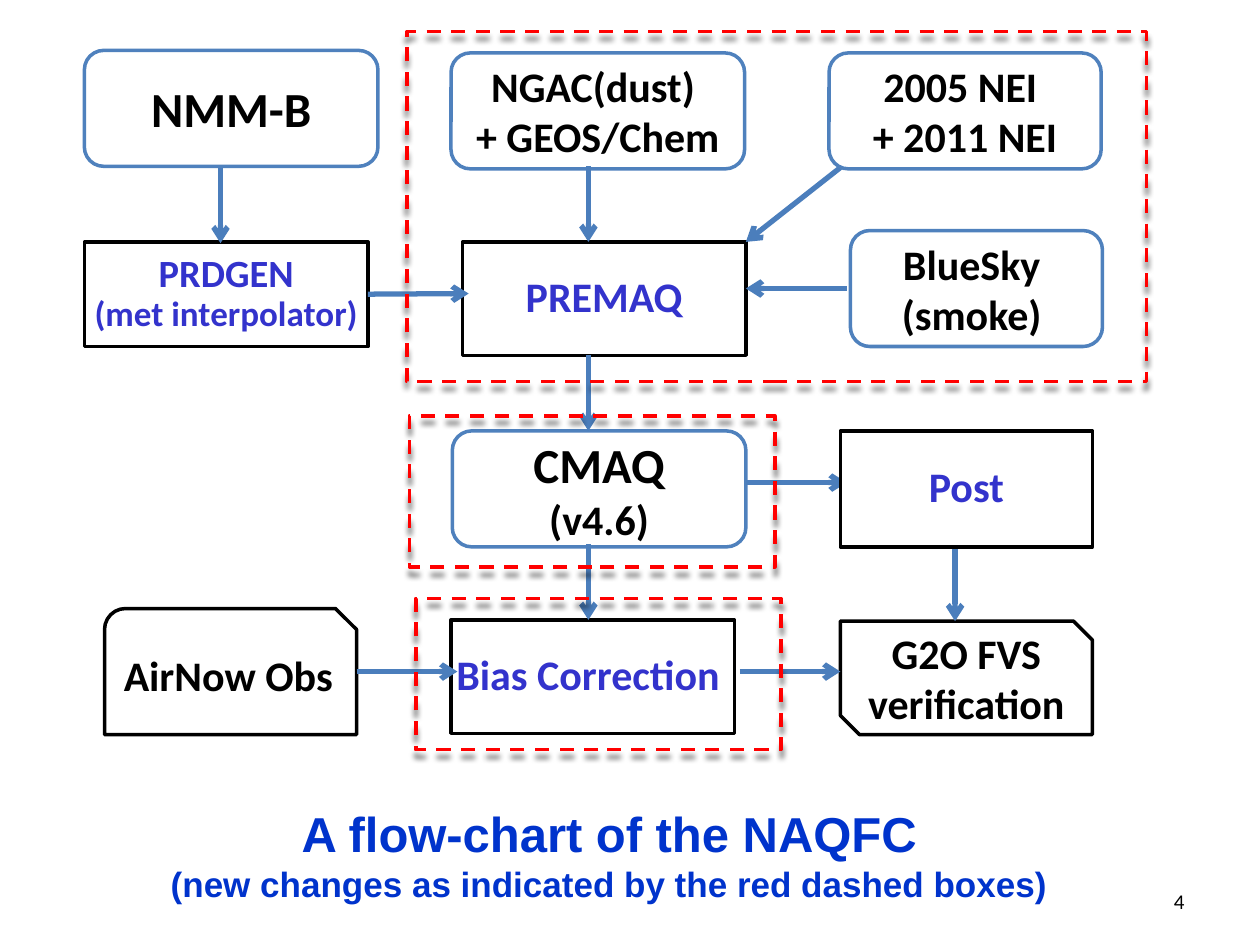
from lxml import etree
from pptx import Presentation
from pptx.dml.color import RGBColor
from pptx.enum.dml import MSO_LINE
from pptx.enum.shapes import MSO_CONNECTOR, MSO_SHAPE as SHAPE
from pptx.enum.text import MSO_ANCHOR, PP_ALIGN as ALIGN
from pptx.oxml.ns import qn
from pptx.util import Inches, Pt

COLORS = {
    "white": "FFFFFF", "black": "000000", "outline": "4F81BD",
    "arrow": "4B7EBC", "process": "3333CC", "title": "0033CC",
    "change": "FF0000",
}


def rgb(name):
    return RGBColor.from_string(COLORS[name])


def write_lines(tf, lines, color, font="Calibri", bold=True,
                align=ALIGN.CENTER, spacing=None):
    for i, (text, size) in enumerate(lines):
        p = tf.add_paragraph() if i else tf.paragraphs[0]
        p.text = text
        p.alignment = align
        p.line_spacing = spacing
        p.font.name = font
        p.font.size = Pt(size)
        p.font.bold = bold
        p.font.color.rgb = rgb(color)


def add_box(slide, kind, at, lines, line="black", color="black",
            wrap=True, spacing=None):
    sp = slide.shapes.add_shape(kind, *map(Inches, at))
    sp.shadow.inherit = False
    sp.fill.solid()
    sp.fill.fore_color.rgb = rgb("white")
    sp.line.color.rgb = rgb(line)
    sp.line.width = Pt(2)
    tf = sp.text_frame
    tf.word_wrap = wrap
    tf.vertical_anchor = MSO_ANCHOR.MIDDLE
    write_lines(tf, lines, color, spacing=spacing)
    return sp


def add_model(slide, at, lines):
    return add_box(slide, SHAPE.ROUNDED_RECTANGLE, at, lines, "outline")


def add_process(slide, at, lines):
    return add_box(slide, SHAPE.FLOWCHART_PROCESS, at, lines,
                   color="process", wrap=False, spacing=0.9)


def add_arrow(slide, x1, y1, x2, y2, source=None):
    cn = slide.shapes.add_connector(
        MSO_CONNECTOR.STRAIGHT, *map(Inches, (x1, y1, x2, y2)))
    if source is not None:
        cn.begin_connect(source, 3)
    cn.line.color.rgb = rgb("arrow")
    cn.line.width = Pt(3)
    etree.SubElement(cn.line._get_or_add_ln(), qn("a:tailEnd"), type="arrow")
    etree.SubElement(cn._element.spPr, qn("a:effectLst"))


def add_change_frame(slide, *at):
    sp = slide.shapes.add_shape(SHAPE.RECTANGLE, *map(Inches, at))
    sp.fill.background()
    sp.line.color.rgb = rgb("change")
    sp.line.width = Pt(2)
    sp.line.dash_style = MSO_LINE.DASH
    sp.shadow.inherit = False
    effects = sp._element.spPr.find(qn("a:effectLst"))
    shadow = etree.SubElement(effects, qn("a:outerShdw"), blurRad="40000",
                              dist="50000", dir="5400000", rotWithShape="0")
    tone = etree.SubElement(shadow, qn("a:srgbClr"), val=COLORS["black"])
    etree.SubElement(tone, qn("a:alpha"), val="60000")


def add_text(slide, at, lines, color, anchor=MSO_ANCHOR.TOP, **style):
    tf = slide.shapes.add_textbox(*map(Inches, at)).text_frame
    tf.word_wrap = True
    tf.vertical_anchor = anchor
    write_lines(tf, lines, color, **style)


def main():
    prs = Presentation()
    prs.slide_width, prs.slide_height = Inches(10), Inches(7.5)
    slide = prs.slides.add_slide(prs.slide_layouts[6])

    prdgen = add_process(slide, (0.67, 1.92, 2.25, 0.83),
                         [("PRDGEN", 22), ("(met interpolator)", 20)])
    add_process(slide, (3.67, 1.92, 2.25, 0.9), [("PREMAQ", 24)])
    add_process(slide, (3.58, 4.92, 2.25, 0.9), [("Bias Correction ", 24)])
    add_model(slide, (0.67, 0.4, 2.33, 0.92), [("NMM-B", 28)])
    add_model(slide, (3.58, 0.42, 2.33, 0.92),
              [("NGAC(dust) ", 24), ("+ GEOS/Chem", 24)])
    add_model(slide, (6.75, 1.83, 2, 0.92),
              [("BlueSky ", 24), ("(smoke) ", 24)])
    add_model(slide, (3.59, 3.42, 2.33, 0.92), [("CMAQ", 28), ("(v4.6)", 24)])
    airnow = add_box(slide, SHAPE.SNIP_ROUND_RECTANGLE, (0.83, 4.83, 2, 1),
                     [("AirNow Obs", 24)])
    add_box(slide, SHAPE.SNIP_2_DIAG_RECTANGLE, (6.67, 4.93, 2, 0.9),
            [("G2O FVS", 24), ("verification", 24)])

    for x, y in [(1.75, 1.33), (4.67, 1.32), (4.67, 2.82), (4.67, 4.32),
                 (7.58, 4.33)]:
        add_arrow(slide, x, y, x, y + 0.6)
    for x, y, source in [(2.92, 2.33, prdgen), (2.83, 5.33, airnow),
                         (5.92, 3.83, None), (5.87, 5.33, None)]:
        add_arrow(slide, x, y, x + 0.8, y, source)
    add_arrow(slide, 6.72, 2.29, 5.92, 2.29)
    add_arrow(slide, 6.67, 1.33, 5.92, 1.92)

    add_process(slide, (6.67, 3.42, 2, 0.92), [("Post", 24)])
    add_model(slide, (6.58, 0.42, 2.16, 0.92),
              [("2005 NEI ", 24), ("+ 2011 NEI", 24)])

    add_change_frame(slide, 3.3, 4.75, 2.9, 1.2)
    add_change_frame(slide, 3.25, 3.3, 2.9, 1.2)
    add_change_frame(slide, 3.23, 0.25, 5.87, 2.78)

    add_text(slide, (0.25, 6.33, 9.17, 0.91),
             [("A flow-chart of the NAQFC", 28),
              ("(new changes as indicated by the red dashed boxes)", 20)],
             "title", font="Arial")
    add_text(slide, (7.17, 6.95, 2.33, 0.4), [("4", 12)], "black",
             MSO_ANCHOR.MIDDLE, bold=False, align=ALIGN.RIGHT)
    prs.save("out.pptx")


if __name__ == "__main__":
    main()
